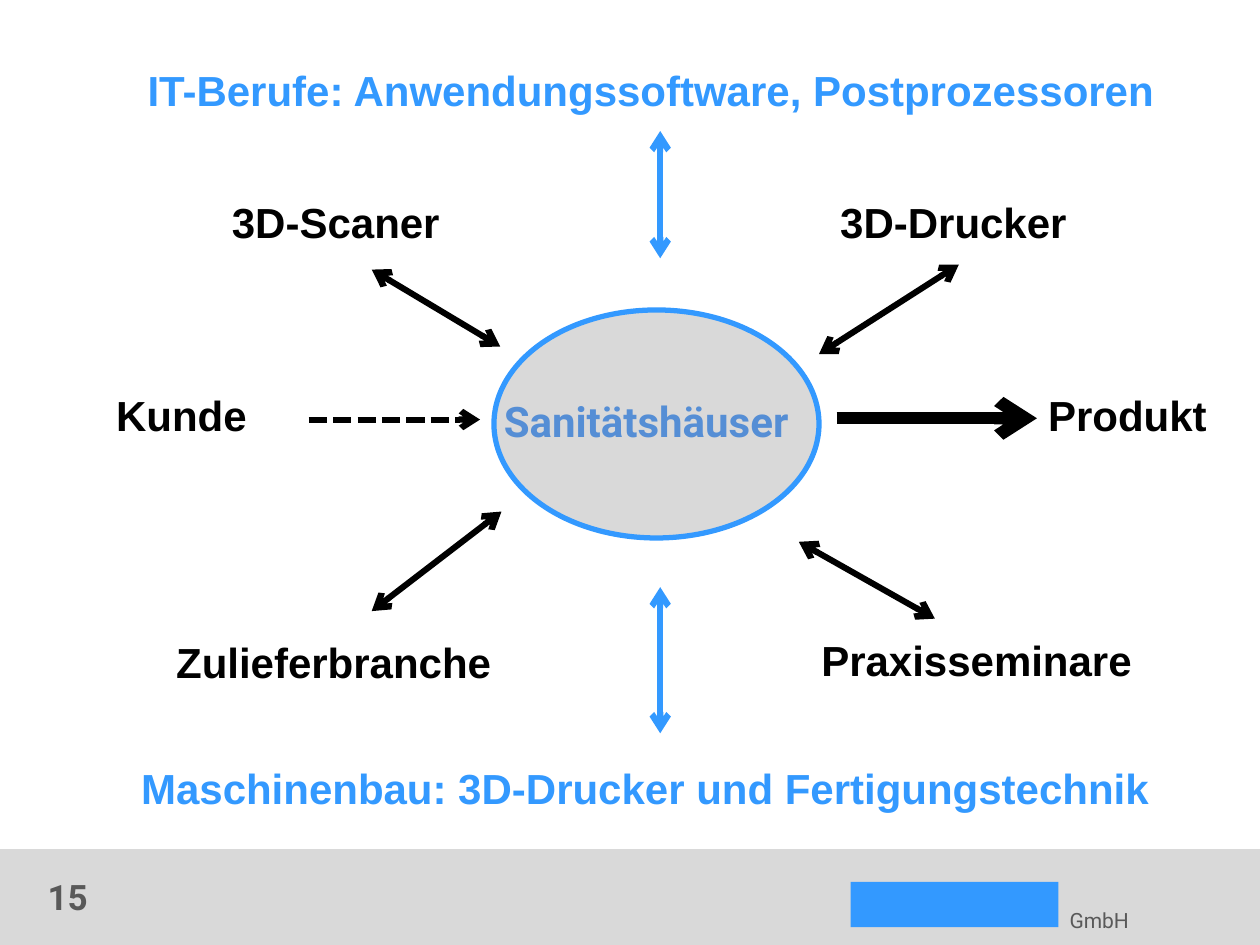
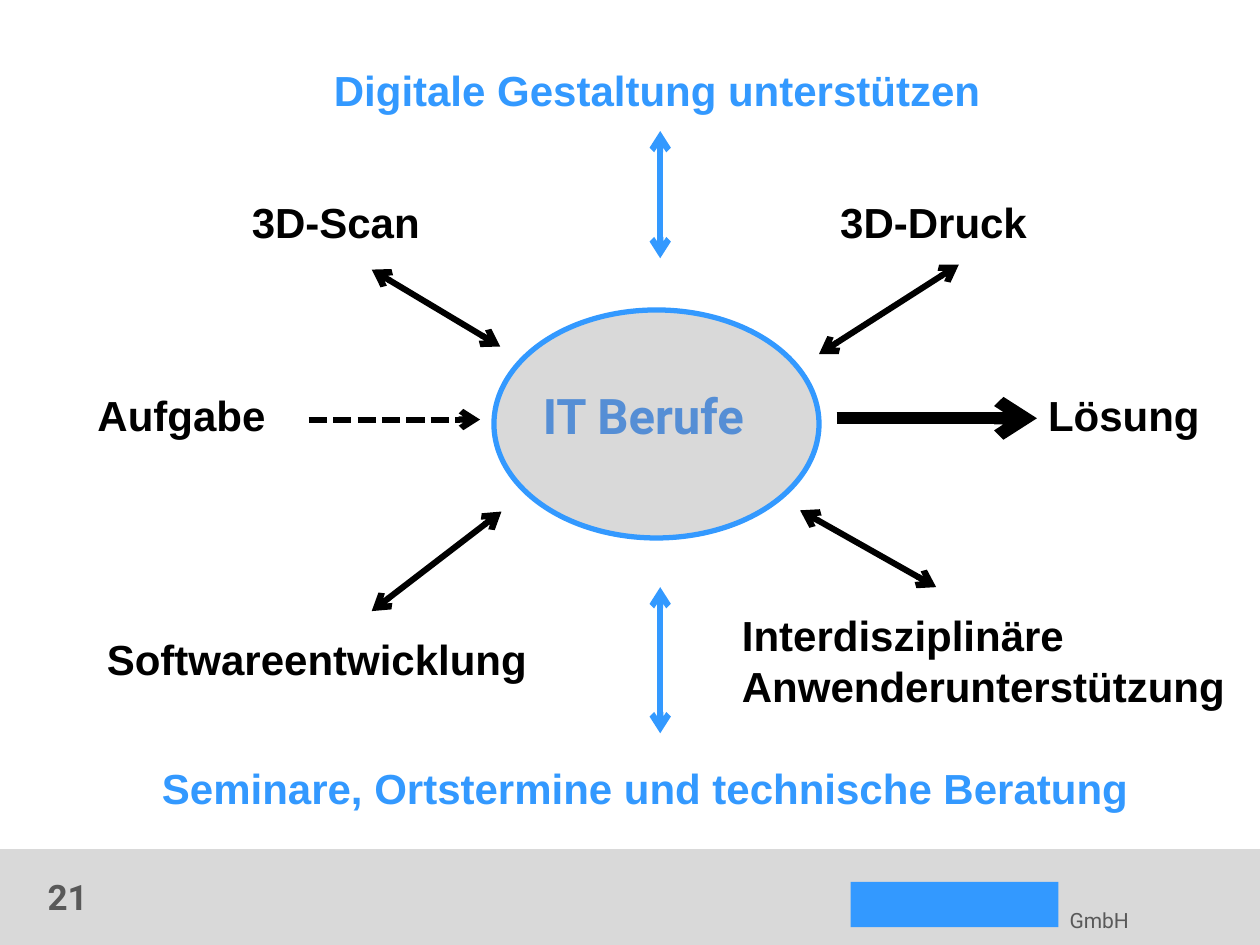
from dataclasses import dataclass

from lxml.etree import SubElement
from pptx import Presentation
from pptx.dml.color import RGBColor
from pptx.enum.dml import MSO_LINE
from pptx.enum.shapes import MSO_CONNECTOR, MSO_SHAPE
from pptx.enum.text import MSO_ANCHOR, MSO_AUTO_SIZE, PP_ALIGN
from pptx.oxml.ns import qn
from pptx.util import Inches, Pt

BLUE = RGBColor(0x33, 0x99, 0xFF)
HUB_BLUE = RGBColor(0x55, 0x8E, 0xD5)
BLACK = RGBColor(0, 0, 0)
GREY = RGBColor(0xD9, 0xD9, 0xD9)
DARK_GREY = RGBColor(0x59, 0x59, 0x59)
BODY_FONT, FOOTER_FONT = "Arial", "Roboto"


@dataclass(frozen=True)
class Label:
    text: str
    left: float
    top: float
    width: float
    height: float = 0.5
    align: PP_ALIGN = PP_ALIGN.LEFT
    color: RGBColor = BLACK
    size: int = 24
    font: str = BODY_FONT
    bold: bool = True


@dataclass(frozen=True)
class Arrow:
    x1: float
    y1: float
    x2: float
    y2: float
    color: RGBColor = BLACK
    width: float = 3.5
    both_ends: bool = True
    dashed: bool = False


@dataclass(frozen=True)
class Diagram:
    number: int
    title: Label
    hub: Label
    labels: tuple[Label, ...]
    seminar_arrow: Arrow


SHARED_ARROWS = (
    Arrow(5.24, 2.05, 5.24, 1.04, BLUE),
    Arrow(5.24, 4.66, 5.24, 5.82, BLUE),
    Arrow(3.97, 2.75, 2.95, 2.14),
    Arrow(3.98, 4.06, 2.95, 4.85),
    Arrow(6.5, 2.81, 7.61, 2.1),
    Arrow(6.64, 3.32, 8.23, 3.32, width=7, both_ends=False),
    Arrow(2.45, 3.33, 3.81, 3.33, both_ends=False, dashed=True),
)


def title_label(text: str, left: float, width: float) -> Label:
    return Label(text, left, 0.46, width, align=PP_ALIGN.RIGHT, color=BLUE)


def hub_label(text: str, left: float, top: float, width: float, size: int) -> Label:
    return Label(text, left, top, width, color=HUB_BLUE, size=size, font=FOOTER_FONT)


def common_labels(source: str, result: str, scan: str, printing: str,
                  bottom: str) -> tuple[Label, ...]:
    """Labels that keep their place on every slide."""
    return (
        Label(source, 0.24, 3.04, 2.4, align=PP_ALIGN.CENTER),
        Label(result, 8.22, 3.04, 1.74),
        Label(scan, 1.36, 1.51, 2.61, align=PP_ALIGN.CENTER),
        Label(printing, 6.57, 1.51, 2.44),
        Label(bottom, 0.75, 6, 8.74, align=PP_ALIGN.CENTER, color=BLUE),
    )


DIAGRAMS = (
    Diagram(
        15,
        title_label("IT-Berufe: Anwendungssoftware, Postprozessoren", 0.91, 8.35),
        hub_label("Sanitätshäuser", 3.9, 3.09, 3.23, 24),
        common_labels("Kunde", "Produkt", "3D-Scaner", "3D-Drucker",
                      "Maschinenbau: 3D-Drucker und Fertigungstechnik")
        + (Label("Zulieferbranche", 1.3, 5, 3.07),
           Label("Praxisseminare", 6.42, 4.99, 2.76)),
        Arrow(6.34, 4.3, 7.42, 4.91),
    ),
    Diagram(
        21,
        title_label("Digitale Gestaltung unterstützen", 1.46, 6.42),
        hub_label("IT Berufe", 4.21, 3.01, 2.68, 28),
        common_labels("Aufgabe", "Lösung", "3D-Scan", "3D-Druck",
                      "Seminare, Ortstermine und technische Beratung")
        + (Label("Softwareentwicklung", 0.75, 4.98, 3.94),
           Label("Interdisziplinäre Anwenderunterstützung", 5.79, 4.79, 4.2, 0.91)),
        Arrow(6.35, 4.05, 7.43, 4.66),
    ),
)


def fill_label(shape, label: Label) -> None:
    """Place a text box or placeholder and write its text."""
    shape.left, shape.top = Inches(label.left), Inches(label.top)
    shape.width, shape.height = Inches(label.width), Inches(label.height)
    tf = shape.text_frame
    tf.word_wrap = True
    tf.auto_size = MSO_AUTO_SIZE.NONE
    tf.vertical_anchor = MSO_ANCHOR.TOP
    tf.text = label.text
    p = tf.paragraphs[0]
    p.alignment = label.align
    p.font.name, p.font.size, p.font.bold = label.font, Pt(label.size), label.bold
    p.font.color.rgb = label.color


def add_label(s, label: Label) -> None:
    fill_label(s.shapes.add_textbox(0, 0, 0, 0), label)


def add_arrow(s, arrow: Arrow) -> None:
    c = s.shapes.add_connector(MSO_CONNECTOR.STRAIGHT, Inches(arrow.x1), Inches(arrow.y1),
                               Inches(arrow.x2), Inches(arrow.y2))
    c.line.color.rgb = arrow.color
    c.line.width = Pt(arrow.width)
    if arrow.dashed:
        c.line.dash_style = MSO_LINE.SQUARE_DOT
    ln = c.line._get_or_add_ln()
    for end in ("a:headEnd", "a:tailEnd") if arrow.both_ends else ("a:tailEnd",):
        SubElement(ln, qn(end), type="arrow")
    SubElement(c._element.spPr, qn("a:effectLst"))


def add_filled(s, kind: MSO_SHAPE, left: float, top: float, width: float, height: float,
               color: RGBColor):
    """Add a preset shape with a plain fill and no outline."""
    shape = s.shapes.add_shape(kind, Inches(left), Inches(top), Inches(width), Inches(height))
    shape.shadow.inherit = False
    shape.fill.solid()
    shape.fill.fore_color.rgb = color
    shape.line.fill.background()
    return shape


def add_footer(s, number: int) -> None:
    # Band with a plain company block
    add_filled(s, MSO_SHAPE.RECTANGLE, 0, 6.74, 10, 0.76, GREY)
    add_filled(s, MSO_SHAPE.RECTANGLE, 6.75, 7, 1.65, 0.36, BLUE)

    # Legal form and page number
    add_label(s, Label("GmbH", 8.39, 7.15, 0.94, 0.3, color=DARK_GREY, size=12,
                       font=FOOTER_FONT, bold=False))
    add_label(s, Label(str(number), 0.28, 6.9, 1.86, color=DARK_GREY, size=20, font=FOOTER_FONT))


def add_hub(s, label: Label) -> None:
    hub = add_filled(s, MSO_SHAPE.OVAL, 3.92, 2.46, 2.58, 1.81, GREY)
    hub.line.color.rgb = BLUE
    hub.line.width = Pt(3)
    add_label(s, label)


def add_diagram(prs, diagram: Diagram) -> None:
    s = prs.slides.add_slide(prs.slide_layouts[5])
    fill_label(s.shapes.title, diagram.title)
    add_footer(s, diagram.number)
    add_hub(s, diagram.hub)
    for arrow in SHARED_ARROWS + (diagram.seminar_arrow,):
        add_arrow(s, arrow)
    for label in diagram.labels:
        add_label(s, label)


def main() -> None:
    prs = Presentation()
    prs.slide_width, prs.slide_height = Inches(10), Inches(7.5)
    for diagram in DIAGRAMS:
        add_diagram(prs, diagram)
    prs.save("out.pptx")


if __name__ == "__main__":
    main()
